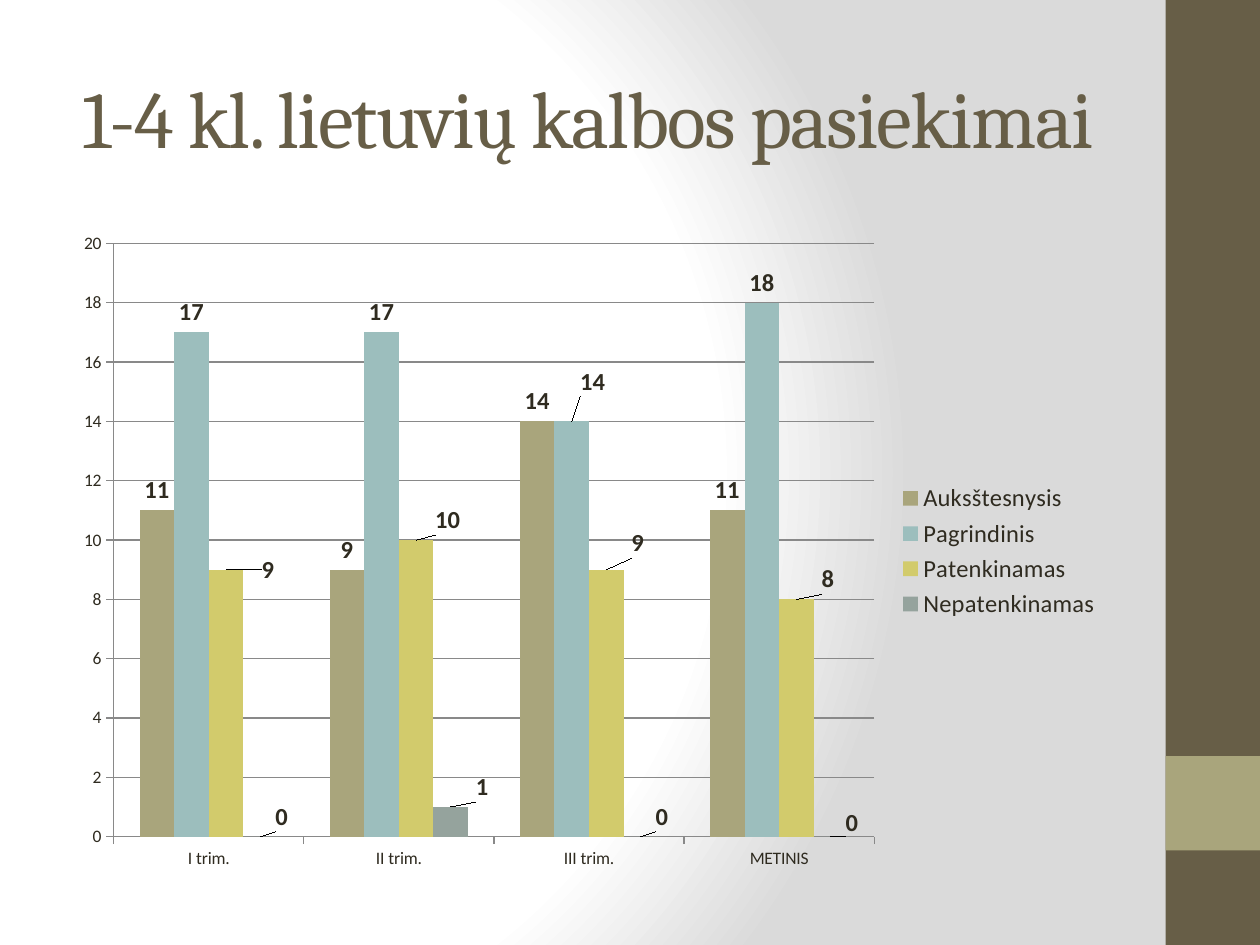
from lxml import etree
from pptx import Presentation
from pptx.chart.data import CategoryChartData
from pptx.dml.color import RGBColor
from pptx.enum.chart import XL_CHART_TYPE, XL_LABEL_POSITION, XL_LEGEND_POSITION, XL_TICK_MARK
from pptx.enum.shapes import MSO_SHAPE
from pptx.enum.text import MSO_ANCHOR, PP_ALIGN
from pptx.oxml import parse_xml
from pptx.oxml.ns import nsdecls, qn
from pptx.util import Pt

COLUMN = XL_CHART_TYPE.COLUMN_CLUSTERED
OUTSIDE_END = XL_LABEL_POSITION.OUTSIDE_END
LEGEND_RIGHT = XL_LEGEND_POSITION.RIGHT
TICK_OUT, TICK_NONE = XL_TICK_MARK.OUTSIDE, XL_TICK_MARK.NONE
RECTANGLE = MSO_SHAPE.RECTANGLE
MIDDLE, CENTER = MSO_ANCHOR.MIDDLE, PP_ALIGN.CENTER

COLORS = {
    "white": "FFFFFF", "shade": "DADADA", "brown": "675E47", "khaki": "A9A57C",
    "teal": "9CBEBD", "yellow": "D2CB6C", "sage": "95A39D", "text": "2F2B20",
    "line": "898989",
}
CATEGORIES = ["I trim.", "II trim.", "III trim.", "METINIS"]
SERIES = [
    ("Auksštesnysis", "khaki", [11, 9, 14, 11], {}),
    ("Pagrindinis", "teal", [17, 17, 14, 18], {2: (0.02, -0.03)}),
    ("Patenkinamas", "yellow", [9, 10, 9, 8],
     {0: (0.04, 0.03), 1: (0.03, 0), 2: (0.03, -0.01), 3: (0.03, 0)}),
    ("Nepatenkinamas", "sage", [0, 1, 0, 0],
     {0: (0.02, 0), 1: (0.03, 0), 2: (0.02, 0), 3: (0.02, 0.01)}),
]


class SlideBuilder:
    """Holds the style and the current slide, and adds each kind of element."""

    def __init__(self, slide):
        self.slide = slide
        self.title_font, self.body_font = "Cambria", "Calibri"

    def color(self, name):
        return RGBColor.from_string(COLORS[name])

    def style_font(self, font, size, color="text", bold=False, name=None):
        font.name, font.size, font.bold = name or self.body_font, Pt(size), bold
        font.color.rgb = self.color(color)

    def background(self, stops):
        self.slide.background.fill.solid()
        properties = self.slide.element.find(".//" + qn("p:bgPr"))
        stop_xml = "".join(
            f'<a:gs pos="{percent * 1000}"><a:srgbClr val="{COLORS[name]}"/></a:gs>'
            for percent, name in stops)
        gradient = parse_xml(
            f'<a:gradFill {nsdecls("a")} rotWithShape="1"><a:gsLst>{stop_xml}</a:gsLst>'
            '<a:path path="circle"><a:fillToRect l="20000" t="50000" r="100000" b="50000"/>'
            '</a:path></a:gradFill>')
        properties.replace(properties.find(qn("a:solidFill")), gradient)

    def rectangle(self, left, top, width, height, color):
        box = self.slide.shapes.add_shape(RECTANGLE, Pt(left), Pt(top), Pt(width), Pt(height))
        box.shadow.inherit = False
        box.fill.solid()
        box.fill.fore_color.rgb = self.color(color)
        box.line.fill.background()

    def title(self, left, top, width, height, text):
        box = self.slide.shapes.add_textbox(Pt(left), Pt(top), Pt(width), Pt(height))
        frame = box.text_frame
        frame.word_wrap = True
        frame.vertical_anchor = MIDDLE
        para = frame.paragraphs[0]
        para.alignment = CENTER
        span = para.add_run()
        span.text = text
        self.style_font(span.font, 46, "brown", name=self.title_font)
        span.font._element.set("spc", "-100")

    def line(self, line_format):
        line_format.color.rgb = self.color("line")
        line_format.width = Pt(0.75)

    def move_label(self, series, index, offset):
        label = series.points[index].data_label
        self.style_font(label.font, 14, bold=True)
        label.position = OUTSIDE_END
        element = series._element.xpath(f'.//c:dLbl[c:idx/@val="{index}"]')[0]
        for old in element.findall(qn("c:layout")):
            element.remove(old)
        layout = etree.Element(qn("c:layout"))
        manual = etree.SubElement(layout, qn("c:manualLayout"))
        for axis, value in zip("xy", offset):
            etree.SubElement(manual, qn(f"c:{axis}")).set("val", str(value))
        element.insert(1, layout)

    def column_chart(self, left, top, width, height):
        data = CategoryChartData()
        data.categories = CATEGORIES
        for name, _, values, _ in SERIES:
            data.add_series(name, values)
        chart = self.slide.shapes.add_chart(
            COLUMN, Pt(left), Pt(top), Pt(width), Pt(height), data).chart
        self.style_font(chart.font, 10)
        chart.has_title = False
        chart.has_legend = True
        chart.legend.position = LEGEND_RIGHT
        chart.legend.include_in_layout = False
        self.style_font(chart.legend.font, 14)
        for axis in (chart.category_axis, chart.value_axis):
            axis.major_tick_mark, axis.minor_tick_mark = TICK_OUT, TICK_NONE
            self.line(axis.format.line)
        scale = chart.value_axis
        scale.minimum_scale, scale.maximum_scale, scale.major_unit = 0, 20, 2
        self.line(scale.major_gridlines.format.line)
        plot = chart.plots[0]
        plot.gap_width, plot.overlap, plot.vary_by_categories = 150, 0, False
        for series, (_, color, _, offsets) in zip(plot.series, SERIES):
            series.format.fill.solid()
            series.format.fill.fore_color.rgb = self.color(color)
            labels = series.data_labels
            labels.show_value = True
            labels.position = OUTSIDE_END
            self.style_font(labels.font, 14, bold=True)
            for index, offset in offsets.items():
                self.move_label(series, index, offset)


def main():
    deck = Presentation()
    deck.slide_width, deck.slide_height = Pt(720), Pt(540)
    page = SlideBuilder(deck.slides.add_slide(deck.slide_layouts[6]))
    page.background([(0, "white"), (75, "white"), (100, "shade")])
    page.rectangle(666, 0, 54, 540, "brown")
    page.rectangle(666, 432, 54, 54, "khaki")
    page.title(36, 21.6, 600, 90, "1-4 kl. lietuvių kalbos pasiekimai")
    page.column_chart(36, 126, 600, 378)
    deck.save("out.pptx")


if __name__ == "__main__":
    main()
